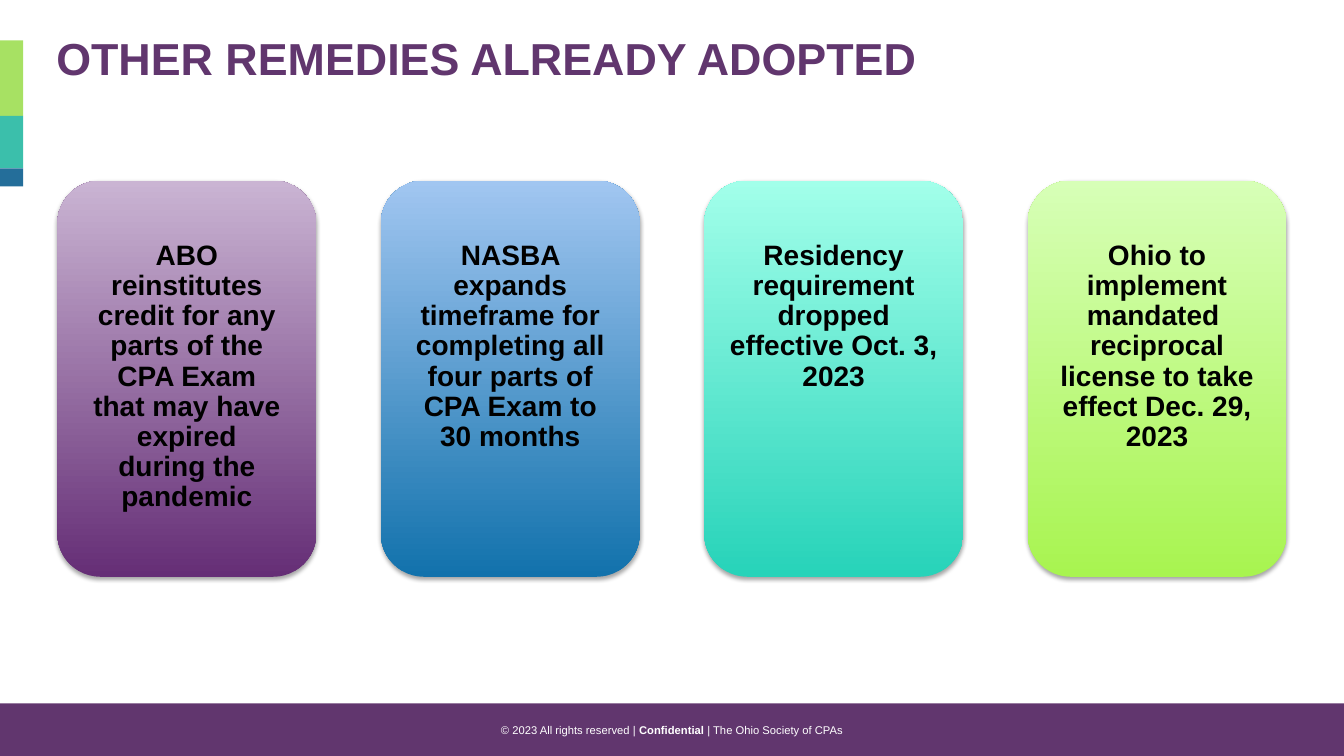
from lxml.etree import SubElement
from pptx import Presentation
from pptx.dml.color import RGBColor
from pptx.enum.shapes import MSO_SHAPE
from pptx.enum.text import MSO_ANCHOR, PP_ALIGN
from pptx.oxml.ns import qn
from pptx.util import Pt

COLORS = {
    "purple": "61366E", "green": "A7E163", "teal": "3BBFAB", "blue": "246E9A",
    "white": "FFFFFF", "black": "000000",
}

# Card text, text width, bottom colour, top colour
CARDS = [
    ("ABO reinstitutes credit for any parts of the CPA Exam that may have "
     "expired during the pandemic", 152, "652E76", "CAB4D3"),
    ("NASBA expands timeframe for completing all four parts of CPA Exam to "
     "30 months", 153, "1272AC", "A1C6F1"),
    ("Residency requirement dropped effective Oct. 3, 2023",
     169, "27D3B9", "A2FFEA"),
    ("Ohio to implement mandated \nreciprocal license to take effect "
     "Dec. 29, 2023", 155, "A8F450", "D7FFB7"),
]
CARD_LEFT, CARD_TOP, CARD_WIDTH, CARD_HEIGHT, CARD_PITCH = 41, 129, 185, 283, 231

prs = Presentation()
prs.slide_width, prs.slide_height = Pt(960), Pt(540)
slide = prs.slides.add_slide(prs.slide_layouts[5])


def add_block(kind, left, top, width, height, color=None):
    block = slide.shapes.add_shape(kind, Pt(left), Pt(top), Pt(width), Pt(height))
    block.shadow.inherit = False
    block.line.fill.background()
    if color:
        block.fill.solid()
        block.fill.fore_color.rgb = RGBColor.from_string(COLORS[color])
    return block


def add_run(paragraph, text, size, color, bold):
    run = paragraph.add_run()
    run.text = text
    run.font.name = "Arial"
    run.font.size = Pt(size)
    run.font.bold = bold
    run.font.color.rgb = RGBColor.from_string(COLORS[color])


# Footer band and left accent bars
add_block(MSO_SHAPE.RECTANGLE, 0, 502.5, 960, 37.5, "purple")
accent_top = 28.8
for color, height in (("green", 54), ("teal", 37.4), ("blue", 13)):
    add_block(MSO_SHAPE.RECTANGLE, 0, accent_top, 16.6, height, color)
    accent_top += height

# Footer text
footer = slide.shapes.add_textbox(Pt(0), Pt(513), Pt(960), Pt(17)).text_frame
footer.word_wrap = True
footer_line = footer.paragraphs[0]
footer_line.alignment = PP_ALIGN.CENTER
for text, bold in (("© 2023 All rights reserved | ", False),
                   ("Confidential", True),
                   (" | The Ohio Society of CPAs", False)):
    add_run(footer_line, text, 8, "white", bold)

# Title
title = slide.shapes.title
title.left, title.top, title.width, title.height = Pt(33), Pt(7), Pt(816), Pt(73.5)
title.text_frame.vertical_anchor = MSO_ANCHOR.MIDDLE
heading = title.text_frame.paragraphs[0]
heading.alignment = PP_ALIGN.LEFT
heading.line_spacing = 0.9
add_run(heading, "OTHER REMEDIES ALREADY ADOPTED", 32, "purple", True)

# Remedy cards
for index, (remedy, text_width, bottom_color, top_color) in enumerate(CARDS):
    left = CARD_LEFT + index * CARD_PITCH
    card = add_block(MSO_SHAPE.ROUNDED_RECTANGLE, left, CARD_TOP,
                     CARD_WIDTH, CARD_HEIGHT)
    card.fill.gradient()
    card.fill.gradient_angle = 90
    for stop, position, color in zip(card.fill.gradient_stops, (0, 1),
                                     (bottom_color, top_color)):
        stop.position = position
        stop.color.rgb = RGBColor.from_string(color)

    # Soft shadow below the card
    effects = card.element.spPr.find(qn("a:effectLst"))
    shadow = SubElement(effects, qn("a:outerShdw"), blurRad=str(Pt(3.1)),
                        dist=str(Pt(1.8)), dir="5400000", rotWithShape="0")
    shade = SubElement(shadow, qn("a:srgbClr"), val=COLORS["black"])
    SubElement(shade, qn("a:alpha"), val="35000")

    # Card text, centred on the card
    text_left = left + (CARD_WIDTH - text_width) / 2
    remedy_text = slide.shapes.add_textbox(Pt(text_left), Pt(168.5),
                                           Pt(text_width), Pt(204)).text_frame
    remedy_text.word_wrap = True
    paragraph = remedy_text.paragraphs[0]
    paragraph.alignment = PP_ALIGN.CENTER
    paragraph.line_spacing = 0.9
    for number, line in enumerate(remedy.split("\n")):
        if number:
            paragraph.add_line_break()
        add_run(paragraph, line, 20, "black", True)

prs.save("out.pptx")
